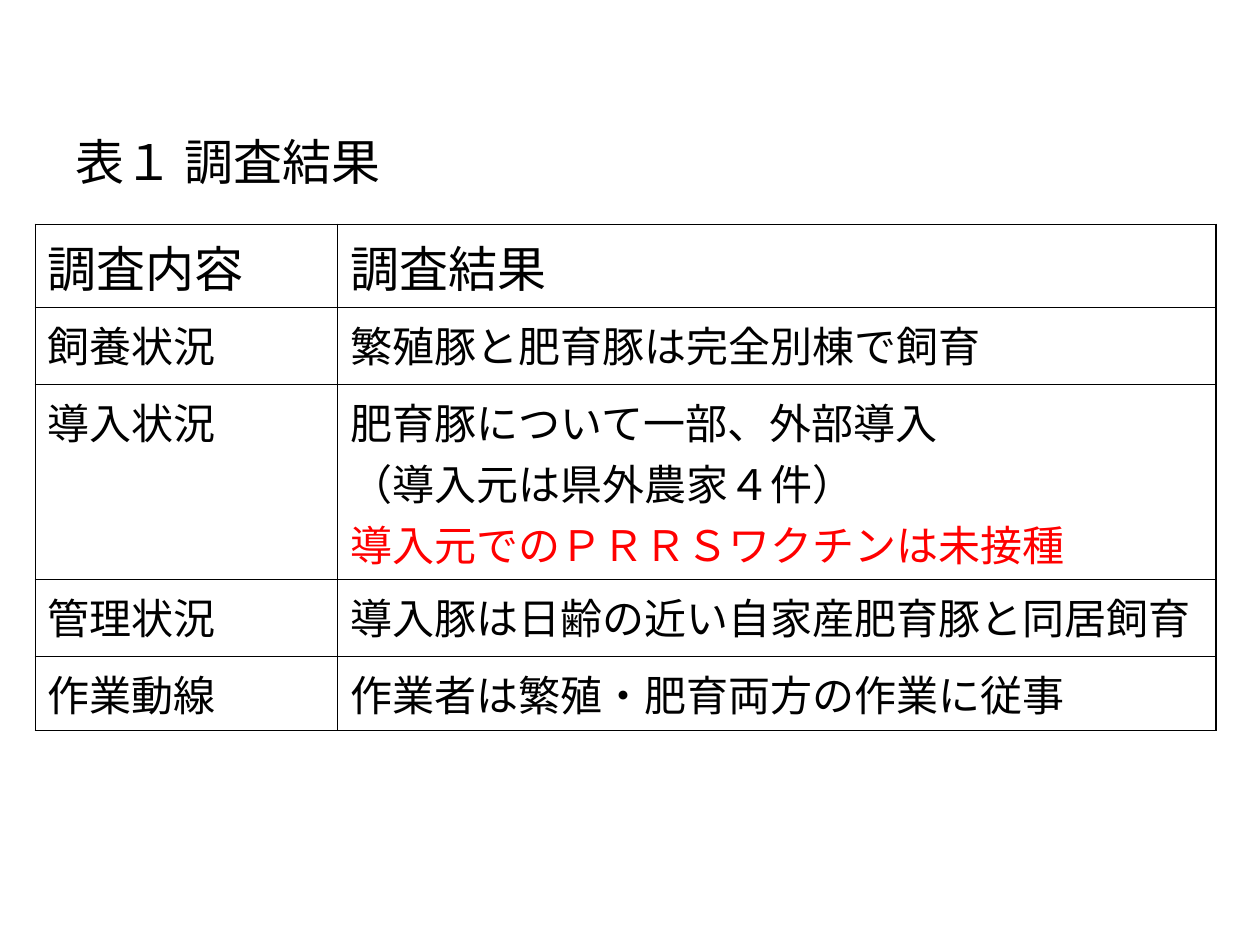
from dataclasses import dataclass

from pptx import Presentation
from pptx.dml.color import RGBColor
from pptx.enum.text import MSO_ANCHOR, PP_ALIGN
from pptx.oxml.ns import qn
from pptx.util import Inches, Pt

CENTER, MIDDLE = PP_ALIGN.CENTER, MSO_ANCHOR.MIDDLE
JAPANESE_FONT = "Noto Sans CJK JP"
BLACK, RED = "000000", "FF0000"
HEADING_SIZE, BODY_SIZE = 28, 24
COLUMN_WIDTHS = (2.4, 6.97)


@dataclass
class Finding:
    topic: str
    results: list[str]
    height: float
    size: int = BODY_SIZE
    last_color: str = BLACK


FINDINGS = [
    Finding("調査内容", ["調査結果"], 0.66, HEADING_SIZE),
    Finding("飼養状況", ["繁殖豚と肥育豚は完全別棟で飼育"], 0.61),
    Finding(
        "導入状況",
        [
            "肥育豚について一部、外部導入",
            "（導入元は県外農家４件）",
            "導入元でのＰＲＲＳワクチンは未接種",
        ],
        1.55,
        last_color=RED,
    ),
    Finding("管理状況", ["導入豚は日齢の近い自家産肥育豚と同居飼育"], 0.61),
    Finding("作業動線", ["作業者は繁殖・肥育両方の作業に従事"], 0.59),
]


def rgb(color: str) -> RGBColor:
    return RGBColor.from_string(color)


def style_paragraph(paragraph, size: int, latin: str, color: str = BLACK) -> None:
    font = paragraph.font
    font.size = Pt(size)
    font.name = latin
    font.color.rgb = rgb(color)
    for run in paragraph.runs:
        properties = run._r.get_or_add_rPr()
        properties.set("lang", "ja-JP")
        east_asian = properties.makeelement(qn("a:ea"), {"typeface": JAPANESE_FONT})
        properties.append(east_asian)


def add_borders(cell) -> None:
    """Draw a black one-point line on all four sides of the cell."""
    properties = cell._tc.get_or_add_tcPr()
    for index, side in enumerate(("a:lnL", "a:lnR", "a:lnT", "a:lnB")):
        line = properties.makeelement(qn(side), {"w": str(Pt(1))})
        properties.insert(index, line)
        fill = line.makeelement(qn("a:solidFill"), {})
        line.append(fill)
        fill.append(fill.makeelement(qn("a:srgbClr"), {"val": BLACK}))


def fill_cell(cell, lines: list[str], size: int, last_color: str = BLACK) -> None:
    cell.fill.background()
    add_borders(cell)
    cell.text_frame.text = "\n".join(lines)
    paragraphs = cell.text_frame.paragraphs
    for paragraph in paragraphs[:-1]:
        style_paragraph(paragraph, size, "Calibri")
    style_paragraph(paragraphs[-1], size, "Calibri", last_color)


def add_title(slide, text: str) -> None:
    box = slide.shapes.add_textbox(Inches(-0.67), Inches(0.78), Inches(4.96), Inches(1))
    frame = box.text_frame
    frame.word_wrap = True
    frame.vertical_anchor = MIDDLE
    frame.text = text
    title = frame.paragraphs[0]
    title.alignment = CENTER
    style_paragraph(title, HEADING_SIZE, JAPANESE_FONT)


def add_findings_table(slide, findings: list[Finding]) -> None:
    table = slide.shapes.add_table(
        len(findings), len(COLUMN_WIDTHS), Inches(0.28), Inches(1.78),
        Inches(sum(COLUMN_WIDTHS)), Inches(sum(f.height for f in findings)),
    ).table
    table.first_row = table.horz_banding = False
    for column, width in zip(table.columns, COLUMN_WIDTHS):
        column.width = Inches(width)
    for row, finding in zip(table.rows, findings):
        row.height = Inches(finding.height)
        topic_cell, result_cell = row.cells
        fill_cell(topic_cell, [finding.topic], finding.size)
        fill_cell(result_cell, finding.results, finding.size, finding.last_color)


def main() -> None:
    presentation = Presentation()
    presentation.slide_width, presentation.slide_height = Inches(10), Inches(7.5)
    slide = presentation.slides.add_slide(presentation.slide_layouts[6])
    add_title(slide, "表１ 調査結果")
    add_findings_table(slide, FINDINGS)
    presentation.save("out.pptx")


if __name__ == "__main__":
    main()
